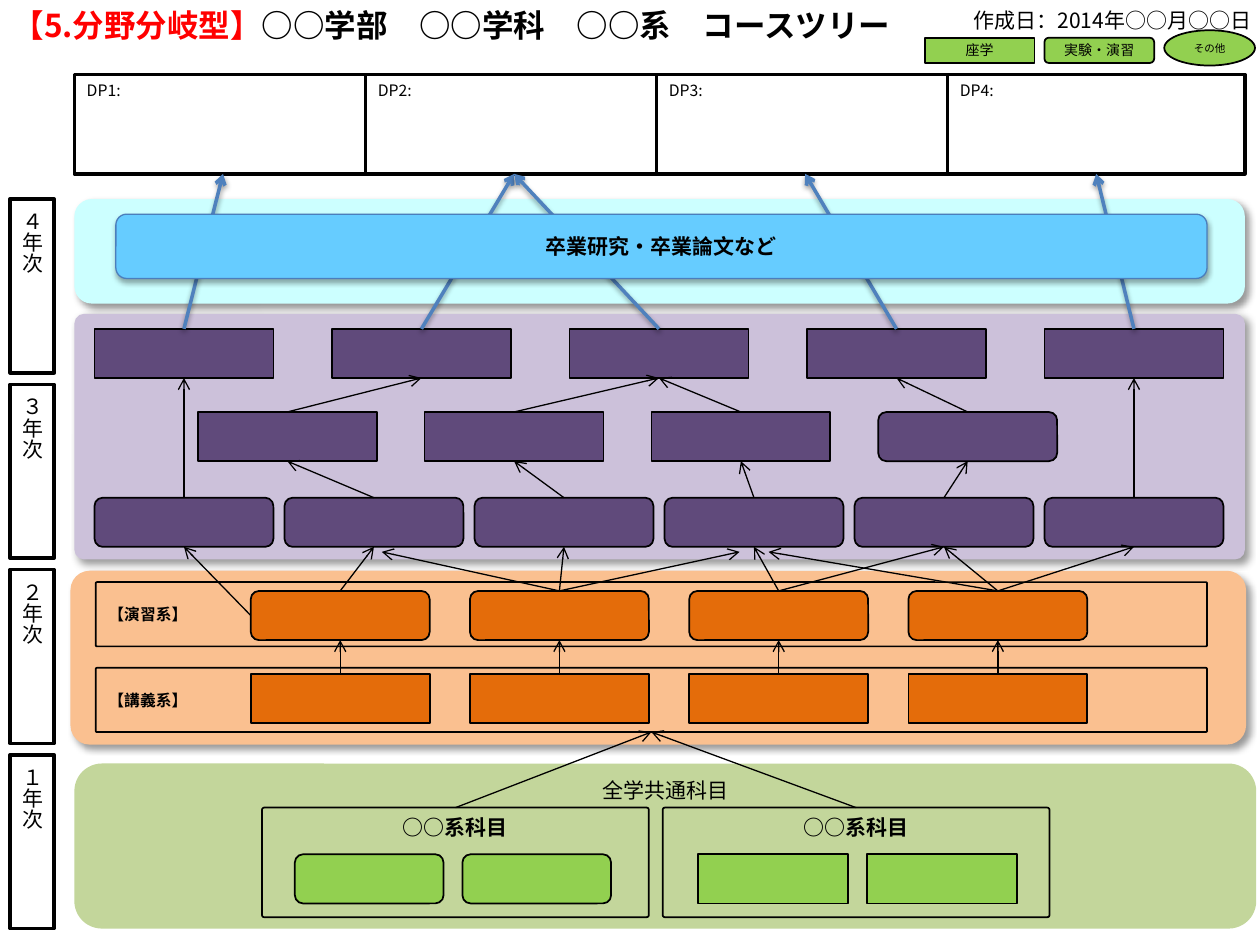
from lxml.etree import SubElement
from pptx import Presentation
from pptx.dml.color import RGBColor
from pptx.enum.shapes import MSO_CONNECTOR, MSO_SHAPE
from pptx.enum.text import MSO_ANCHOR, MSO_AUTO_SIZE, PP_ALIGN
from pptx.oxml.ns import qn
from pptx.util import Inches, Pt

COLORS = {
    "black": "000000", "white": "FFFFFF", "red": "FF0000", "green": "92D050",
    "common": "C3D69B", "second": "FAC090", "orange": "E46C0A",
    "third": "CCC1DA", "purple": "604A7B", "fourth": "CCFFFF",
    "thesis": "66CCFF", "thesis_line": "4B7EBC", "blue": "4F81BD",
}
FONT = "Noto Sans CJK JP"
RECT, ROUND, OVAL = MSO_SHAPE.RECTANGLE, MSO_SHAPE.ROUNDED_RECTANGLE, MSO_SHAPE.OVAL
TOP, LEFT, BOTTOM = 0, 1, 2
# Shadows: opacity %, blur pt, distance pt, angle
BAND_SHADOW = (40, 4, 3, 45)
THESIS_SHADOW = (35, 3.1, 1.8, 90)
ARROW_SHADOW = (38, 3.1, 1.6, 90)


def color(name):
    return RGBColor.from_string(COLORS[name])


class CourseTree:
    def __init__(self, slide):
        self.slide = slide

    def format_paragraph(self, paragraph, size, bold=False, align=PP_ALIGN.LEFT):
        paragraph.alignment = align
        font = paragraph.font
        font.name, font.size, font.bold = FONT, Pt(size), bold
        font.color.rgb = color("black")
        properties = paragraph._p.pPr.find(qn("a:defRPr"))
        SubElement(properties, qn("a:ea")).set("typeface", FONT)

    def add_shadow(self, shape, shadow=None):
        properties = shape.element.spPr
        effects = properties.find(qn("a:effectLst"))
        if effects is None:
            effects = SubElement(properties, qn("a:effectLst"))
        if shadow:
            opacity, blur, distance, angle = shadow
            outer = SubElement(effects, qn("a:outerShdw"), blurRad=str(Pt(blur)),
                               dist=str(Pt(distance)), dir=str(angle * 60000),
                               rotWithShape="0")
            tint = SubElement(outer, qn("a:srgbClr"), val=COLORS["black"])
            SubElement(tint, qn("a:alpha"), val=str(opacity * 1000))

    def title(self, box, parts, size):
        shape = self.slide.shapes.title
        shape.left, shape.top, shape.width, shape.height = map(Inches, box)
        frame = shape.text_frame
        frame.auto_size = MSO_AUTO_SIZE.NONE
        frame.vertical_anchor = MSO_ANCHOR.MIDDLE
        paragraph = frame.paragraphs[0]
        self.format_paragraph(paragraph, size, bold=True)
        for text, name in parts:
            run = paragraph.add_run()
            run.text = text
            run.font.color.rgb = color(name)

    def note(self, box, text, size):
        frame = self.slide.shapes.add_textbox(*map(Inches, box)).text_frame
        frame.word_wrap = False
        frame.auto_size = MSO_AUTO_SIZE.SHAPE_TO_FIT_TEXT
        frame.text = text
        self.format_paragraph(frame.paragraphs[0], size, align=PP_ALIGN.RIGHT)

    def box(self, kind, box, fill=None, line="black", width=1, corner=None, shadow=None,
            text="", size=12, bold=False, align=PP_ALIGN.CENTER,
            anchor=MSO_ANCHOR.MIDDLE, vertical=False):
        shape = self.slide.shapes.add_shape(kind, *map(Inches, box))
        shape.shadow.inherit = False
        if fill:
            shape.fill.solid()
            shape.fill.fore_color.rgb = color(fill)
        else:
            shape.fill.background()
        if line:
            shape.line.color.rgb = color(line)
            shape.line.width = Pt(width)
        else:
            shape.line.fill.background()
        if corner is not None:
            shape.adjustments[0] = corner
        self.add_shadow(shape, shadow)
        if text:
            frame = shape.text_frame
            frame.text = text
            frame.vertical_anchor = anchor
            self.format_paragraph(frame.paragraphs[0], size, bold, align)
            if vertical:
                frame._txBody.bodyPr.set("vert", "eaVert")
        return shape

    def row(self, kinds, left, step, top, width, fill):
        return [self.box(kind, (left + step * i, top, width, 0.39), fill)
                for i, kind in enumerate(kinds)]

    def arrow(self, source, target=None, side=TOP, point=None,
              line="black", width=0.75, shadow=None):
        end = map(Inches, point or (0, 0))
        connector = self.slide.shapes.add_connector(
            MSO_CONNECTOR.STRAIGHT, source.left + source.width // 2, source.top, *end)
        connector.begin_connect(source, side)
        if target is not None:
            connector.end_connect(target, BOTTOM)
        connector.line.color.rgb = color(line)
        connector.line.width = Pt(width)
        SubElement(connector.element.spPr.find(qn("a:ln")), qn("a:tailEnd"), type="arrow")
        self.add_shadow(connector, shadow)


def main():
    presentation = Presentation()
    presentation.slide_width, presentation.slide_height = Inches(10), Inches(7.5)
    tree = CourseTree(presentation.slides.add_slide(presentation.slide_layouts[5]))

    # Heading, date and legend
    tree.title((0, 0, 8.39, 0.4), [("【5.分野分岐型】", "red"),
                                   ("○○学部　○○学科　○○系　コースツリー", "black")], 18)
    tree.note((7.56, 0.01, 2.47, 0.3), "作成日：2014年○○月○○日", 12)
    for kind, box, text, size in [
            (RECT, (7.34, 0.3, 0.87, 0.2), "座学", 8),
            (ROUND, (8.29, 0.3, 0.87, 0.2), "実験・演習", 8),
            (OVAL, (9.24, 0.24, 0.72, 0.28), "その他", 6)]:
        tree.box(kind, box, "green", text=text, size=size)

    # Diploma policies and school years
    policies = [tree.box(RECT, (0.59 + 2.31 * i, 0.59, 2.36, 0.79), "white", width=2,
                         text=f"DP{i + 1}:", size=9, align=PP_ALIGN.LEFT,
                         anchor=MSO_ANCHOR.TOP) for i in range(4)]
    for i, year in enumerate("４３２１"):
        tree.box(RECT, (0.08, 1.58 + 1.47 * i, 0.35, 1.38), "white", width=2,
                 text=f"{year}年次", vertical=True)

    # Year bands
    tree.box(ROUND, (0.59, 6.06, 9.38, 1.31), "common", None, text="全学共通科目",
             anchor=MSO_ANCHOR.TOP)
    for box, fill, corner in [((0.56, 4.53, 9.33, 1.38), "second", 0.11),
                              ((0.59, 1.58, 9.29, 0.83), "fourth", None),
                              ((0.59, 2.49, 9.29, 1.95), "third", 0.04)]:
        tree.box(ROUND, box, fill, None, corner=corner, shadow=BAND_SHADOW)

    # Courses
    lectures = tree.row([RECT] * 4, 1.99, 1.74, 5.35, 1.42, "orange")
    exercises = tree.row([ROUND] * 4, 1.99, 1.74, 4.69, 1.42, "orange")
    tree.row([ROUND] * 2, 2.34, 1.33, 6.78, 1.18, "green")
    tree.row([RECT] * 2, 5.54, 1.34, 6.78, 1.19, "green")
    upper = tree.row([RECT] * 5, 0.75, 7.54 / 4, 2.61, 1.42, "purple")
    middle = tree.row([RECT] * 3 + [ROUND], 1.57, 1.8, 3.27, 1.42, "purple")
    lower = tree.row([ROUND] * 6, 0.75, 7.54 / 5, 3.95, 1.42, "purple")

    # Group frames
    subjects = [tree.box(ROUND, (left, 6.41, 3.07, 0.87), corner=0.02, text="○○系科目",
                         bold=True, anchor=MSO_ANCHOR.TOP) for left in (2.08, 5.26)]
    lecture_frame, _ = [
        tree.box(ROUND, (0.76, top, 8.82, 0.51), corner=0.02, text=text, size=9,
                 bold=True, align=PP_ALIGN.LEFT)
        for top, text in [(5.3, "【講義系】"), (4.62, "【演習系】")]]

    # Arrows between courses
    for subject in subjects:
        tree.arrow(subject, lecture_frame)
    for lecture, exercise in zip(lectures, exercises):
        tree.arrow(lecture, exercise)
    tree.arrow(exercises[0], lower[0], side=LEFT)
    for sources, targets, pairs in [
            (exercises, lower, [(0, 1), (1, 2), (2, 3), (2, 4), (3, 4), (3, 5)]),
            (lower, upper, [(0, 0), (5, 4)]),
            (lower, middle, [(1, 0), (2, 1), (3, 2), (4, 3)]),
            (middle, upper, [(0, 1), (1, 2), (2, 2), (3, 3)])]:
        for start, end in pairs:
            tree.arrow(sources[start], targets[end])
    for start, left in [(3, 6.1), (1, 5.87), (1, 3.03)]:
        tree.arrow(exercises[start], point=(left, 4.38))

    # Arrows to the policies pass behind the thesis bar
    for course, policy in zip(upper, (0, 1, 1, 2, 3)):
        tree.arrow(course, policies[policy], line="blue", width=2, shadow=ARROW_SHADOW)
    tree.box(ROUND, (0.92, 1.7, 8.66, 0.51), "thesis", "thesis_line", 0.75,
             shadow=THESIS_SHADOW, text="卒業研究・卒業論文など", bold=True)

    presentation.save("out.pptx")


if __name__ == "__main__":
    main()
